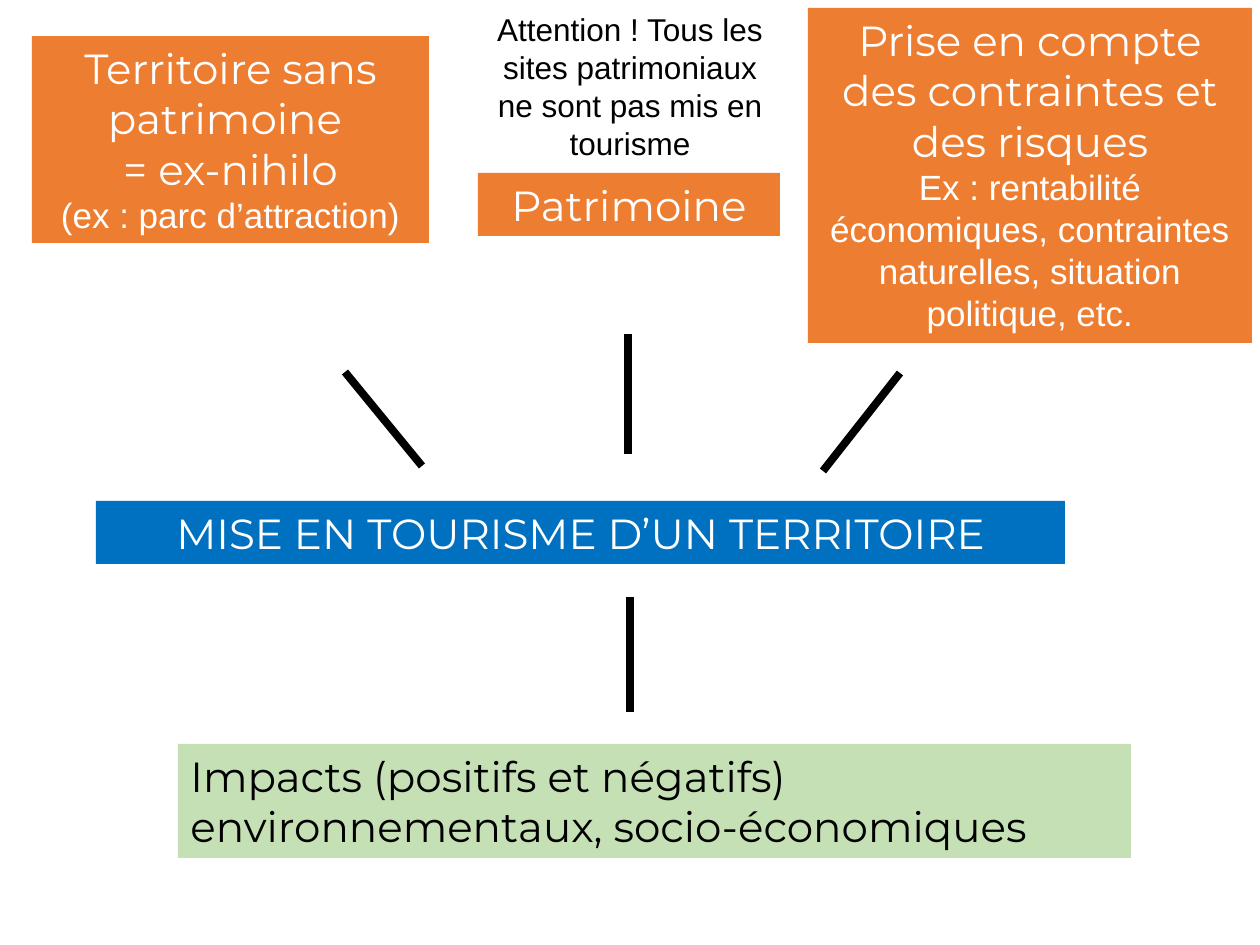
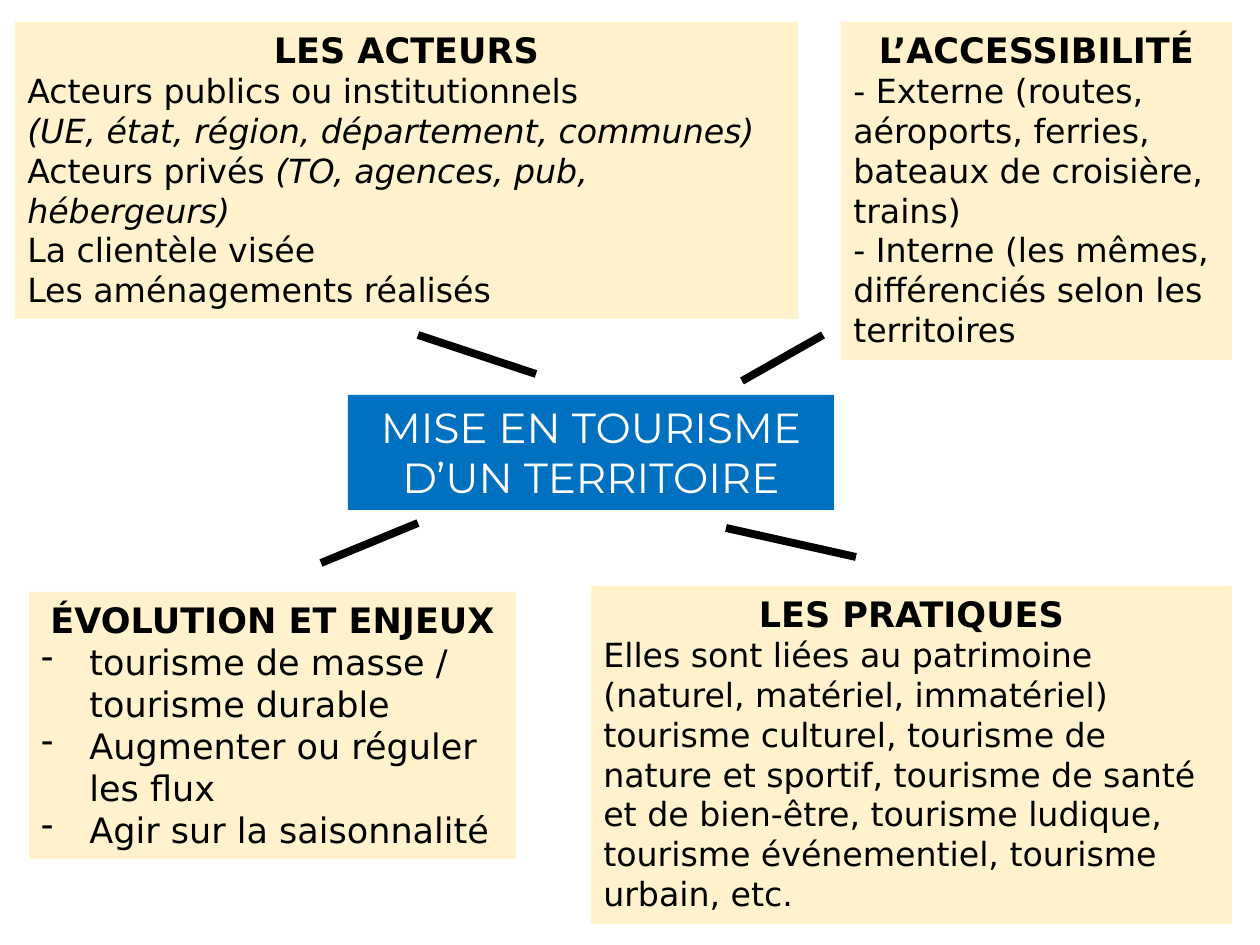
"""Two concept maps about opening a territory to tourism."""
from lxml.etree import SubElement
from pptx import Presentation
from pptx.dml.color import RGBColor
from pptx.enum.shapes import MSO_CONNECTOR
from pptx.enum.text import PP_ALIGN
from pptx.oxml.ns import qn
from pptx.util import Pt

SCALE = 914400 / 126
INDENT = 48
HEX = {
    "blue": "0070C0", "orange": "ED7D31", "green": "C5E0B4",
    "cream": "FFF2CC", "white": "FFFFFF", "black": "000000",
}
# font, size, colour, centred, bold
STYLES = {
    "head": ("Montserrat", 24, "white", True, False),
    "sub": ("Arial", 20, "white", True, False),
    "note": ("Arial", 18, "black", True, False),
    "impact": ("Montserrat", 24, "black", False, False),
    "title": ("DejaVu Sans", 20, "black", True, True),
    "body": ("DejaVu Sans", 19, "black", False, False),
    "bullet": ("DejaVu Sans", 20, "black", False, False),
}
TOPIC = "MISE EN TOURISME D’UN TERRITOIRE"


def px(num):
    """Turn px into EMU."""
    return round(num * SCALE)


def color(name):
    """Look up a named colour."""
    return RGBColor.from_string(HEX[name])


def dash(para):
    """Give a paragraph a hanging dash."""
    props = para._p.get_or_add_pPr()
    props.set("marL", str(px(INDENT)))
    props.set("indent", str(-px(INDENT)))
    SubElement(props, qn("a:buChar")).set("char", "-")


def write(para, style, text):
    """Write one styled paragraph; parts after a bar are italic."""
    face, size, ink, center, bold = STYLES[style]
    if style == "bullet":
        dash(para)
    para.alignment = PP_ALIGN.CENTER if center else PP_ALIGN.LEFT
    font = para.font
    font.name, font.size, font.bold = face, Pt(size), bold
    font.color.rgb = color(ink)
    plain, _, slant = text.partition("|")
    if plain:
        para.add_run().text = plain
    if slant:
        run = para.add_run()
        run.text = slant
        (run if plain else para).font.italic = True


def card(slide, box, fill, *lines):
    """Add a filled text box made of (style, text) lines."""
    shape = slide.shapes.add_textbox(*map(px, box))
    shape.fill.solid()
    shape.fill.fore_color.rgb = color(fill)
    frame = shape.text_frame
    frame.word_wrap = True
    for num, line in enumerate(lines):
        para = frame.add_paragraph() if num else frame.paragraphs[0]
        write(para, *line)


def panel(slide, box, title, style, *texts):
    """Add a cream card with a bold title and lines of one style."""
    card(slide, box, "cream", ("title", title), *((style, text) for text in texts))


def link(slide, *ends):
    """Add a thick black line between two points."""
    line = slide.shapes.add_connector(MSO_CONNECTOR.STRAIGHT, *map(px, ends))
    line.line.width = Pt(4.5)
    line.line.color.rgb = color("black")
    SubElement(line._element.spPr, qn("a:effectLst"))


def causes(slide):
    """Draw what leads to tourism and its impacts."""
    card(slide, (96, 501, 969, 63), "blue", ("head", TOPIC))
    card(slide, (478, 173, 302, 63), "orange", ("head", "Patrimoine"))
    card(slide, (479, 4, 302, 165), "white",
         ("note", "Attention ! Tous les sites patrimoniaux ne sont pas mis en tourisme"))
    card(slide, (32, 36, 397, 207), "orange",
         ("head", "Territoire sans patrimoine "),
         ("head", "= ex-nihilo"),
         ("sub", "(ex : parc d’attraction)"))
    card(slide, (178, 744, 953, 114), "green",
         ("impact", "Impacts (positifs et négatifs) environnementaux, socio-économiques"))
    card(slide, (808, 8, 444, 335), "orange",
         ("head", "Prise en compte des contraintes et des risques"),
         ("sub", "Ex : rentabilité économiques, contraintes naturelles, "
                 "situation politique, etc."))
    link(slide, 628, 334, 628, 454)
    link(slide, 345, 372, 422, 466)
    link(slide, 630, 597, 630, 712)
    link(slide, 900, 373, 823, 471)


def themes(slide):
    """Draw the four themes around the topic."""
    card(slide, (348, 395, 486, 115), "blue", ("head", TOPIC))
    panel(slide, (15, 22, 783, 297), "LES ACTEURS", "body",
          "Acteurs publics ou institutionnels",
          "|(UE, état, région, département, communes)",
          "Acteurs privés |(TO, agences, pub, hébergeurs)",
          "La clientèle visée",
          "Les aménagements réalisés")
    panel(slide, (841, 22, 391, 338), "L’ACCESSIBILITÉ", "body",
          "- Externe (routes, aéroports, ferries, bateaux de croisière, trains)",
          "- Interne (les mêmes, différenciés selon les territoires")
    panel(slide, (591, 586, 641, 338), "LES PRATIQUES", "body",
          "Elles sont liées au patrimoine (naturel, matériel, immatériel)",
          "tourisme culturel, tourisme de nature et sportif, tourisme de santé "
          "et de bien-être, tourisme ludique, tourisme événementiel, "
          "tourisme urbain, etc.")
    panel(slide, (29, 592, 487, 267), "ÉVOLUTION ET ENJEUX", "bullet",
          "tourisme de masse / tourisme durable",
          "Augmenter ou réguler les flux",
          "Agir sur la saisonnalité")
    link(slide, 418, 335, 536, 374)
    link(slide, 742, 381, 823, 335)
    link(slide, 726, 528, 856, 557)
    link(slide, 321, 563, 418, 523)


def main():
    """Build and save the deck."""
    deck = Presentation()
    deck.slide_width, deck.slide_height = px(1260), px(945)
    for draw in (causes, themes):
        draw(deck.slides.add_slide(deck.slide_layouts[6]))
    deck.save("out.pptx")


if __name__ == "__main__":
    main()
